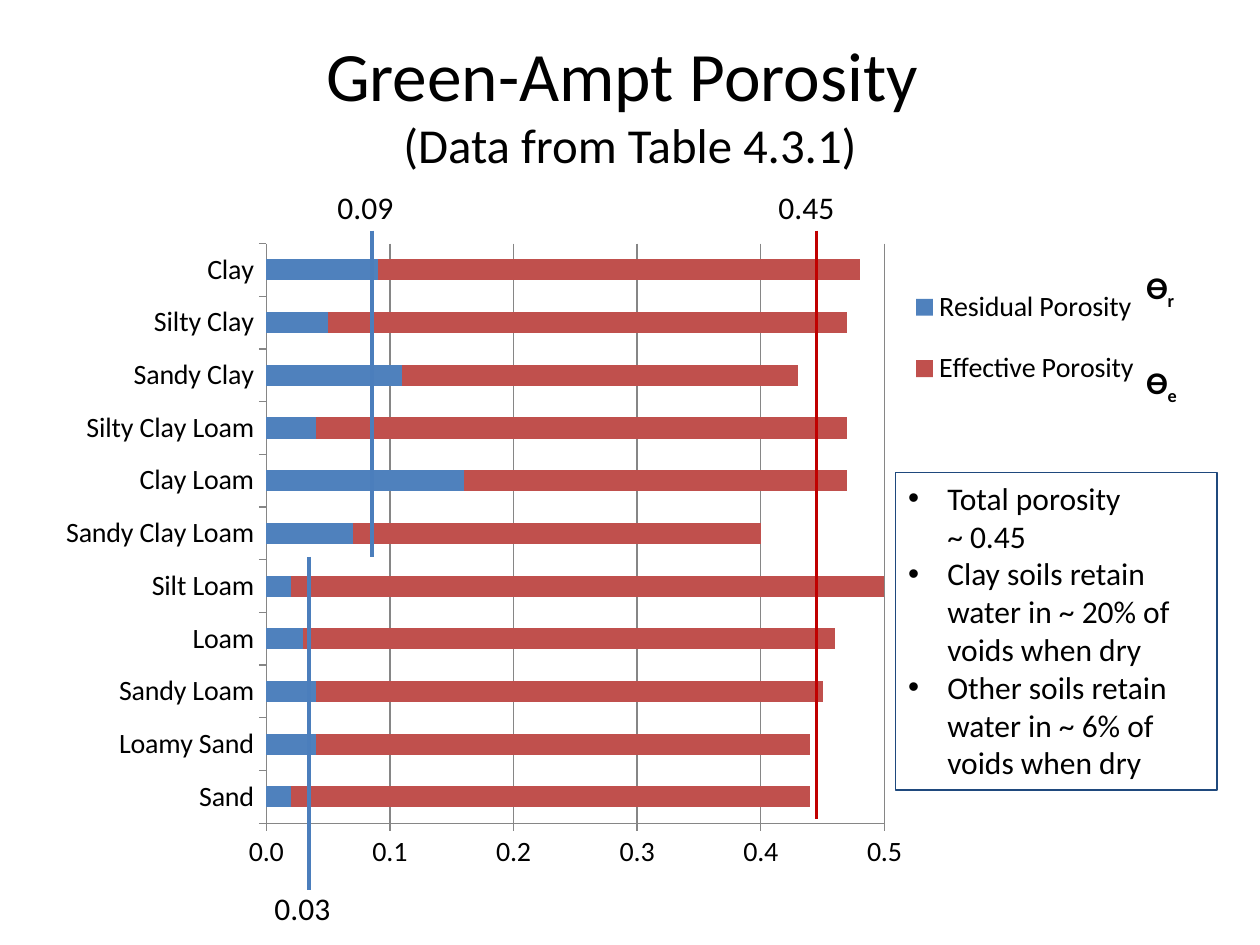
import dataclasses

import pptx
import pptx.chart.data
import pptx.dml.color
import pptx.enum.chart
import pptx.enum.shapes
import pptx.enum.text
import pptx.oxml
import pptx.oxml.ns
import pptx.util

Inches = pptx.util.Inches
Pt = pptx.util.Pt
Align = pptx.enum.text.PP_ALIGN


@dataclasses.dataclass(frozen=True)
class Theme:
    font: str = "Calibri"
    ink: str = "000000"
    blue: str = "4F81BD"
    red: str = "C0504D"
    mark: str = "4B7EBC"
    total: str = "C00000"
    edge: str = "1F497D"
    grid: str = "868686"
    title: float = 39.6
    sub: float = 27.9
    body: float = 18
    axis: float = 16


THEME = Theme()

SOILS = [
    ("Sand", 0.02, 0.42),
    ("Loamy Sand", 0.04, 0.40),
    ("Sandy Loam", 0.04, 0.41),
    ("Loam", 0.03, 0.43),
    ("Silt Loam", 0.02, 0.49),
    ("Sandy Clay Loam", 0.07, 0.33),
    ("Clay Loam", 0.16, 0.31),
    ("Silty Clay Loam", 0.04, 0.43),
    ("Sandy Clay", 0.11, 0.32),
    ("Silty Clay", 0.05, 0.42),
    ("Clay", 0.09, 0.39),
]
NOTES = [
    "Total porosity\v~ 0.45",
    "Clay soils retain water in ~ 20% of voids when dry",
    "Other soils retain water in ~ 6% of voids when dry",
]


def color(code):
    return pptx.dml.color.RGBColor.from_string(code)


def style(font, size, bold=False):
    font.name = THEME.font
    font.size = Pt(size)
    font.bold = bold
    font.color.rgb = color(THEME.ink)


def stroke(line, code, width):
    line.color.rgb = color(code)
    line.width = Pt(width)


def add_text(shapes, box, lines, size, wrap=False):
    shape = shapes.add_textbox(*map(Inches, box))
    frame = shape.text_frame
    frame.word_wrap = wrap
    frame.text = "\n".join(lines)
    for para in frame.paragraphs:
        for run in para.runs:
            style(run.font, size)
    return shape


def add_title(shapes):
    lines = ["Green-Ampt Porosity \v(Data from Table 4.3.1)"]
    shape = add_text(shapes, (0.5, 0.19, 9, 1.25), lines, THEME.title, True)
    frame = shape.text_frame
    frame.vertical_anchor = pptx.enum.text.MSO_ANCHOR.MIDDLE
    para = frame.paragraphs[0]
    para.alignment = Align.CENTER
    para.runs[1].font.size = Pt(THEME.sub)


def set_layout(part, left, top, width, height, inner=False):
    old = part.find(pptx.oxml.ns.qn("c:layout"))
    if old is not None:
        part.remove(old)
    target = '<c:layoutTarget val="inner"/>' if inner else ""
    sizes = zip("xywh", (left, top, width, height))
    values = "".join(f'<c:{key} val="{size}"/>' for key, size in sizes)
    layout = pptx.oxml.parse_xml(
        f'<c:layout {pptx.oxml.ns.nsdecls("c")}><c:manualLayout>{target}'
        f'<c:xMode val="edge"/><c:yMode val="edge"/>{values}'
        "</c:manualLayout></c:layout>"
    )
    part.insert(0 if inner else 1, layout)


def add_bars(shapes):
    names, dry, free = zip(*SOILS)
    data = pptx.chart.data.CategoryChartData()
    data.categories = names
    data.add_series("Residual Porosity", dry)
    data.add_series("Effective Porosity", free)
    kind = pptx.enum.chart.XL_CHART_TYPE.BAR_STACKED
    box = map(Inches, (0.33, 1.83, 8.92, 5.17))
    chart = shapes.add_chart(kind, *box, data).chart
    chart.has_title = False
    style(chart.font, THEME.axis)

    plot = chart.plots[0]
    plot.gap_width = 150
    plot.overlap = 100
    plot.vary_by_categories = False
    for series, code in zip(plot.series, (THEME.blue, THEME.red)):
        series.format.fill.solid()
        series.format.fill.fore_color.rgb = color(code)

    for axis in (chart.category_axis, chart.value_axis):
        axis.major_tick_mark = pptx.enum.chart.XL_TICK_MARK.OUTSIDE
        style(axis.tick_labels.font, THEME.axis)
        stroke(axis.format.line, THEME.grid, 0.75)
    scale = chart.value_axis
    scale.minimum_scale = 0
    scale.maximum_scale = 0.5
    scale.major_unit = 0.1
    scale.tick_labels.number_format = "0.0"
    scale.tick_labels.number_format_is_linked = False
    scale.has_major_gridlines = True
    stroke(scale.major_gridlines.format.line, THEME.grid, 0.75)

    chart.has_legend = True
    legend = chart.legend
    legend.position = pptx.enum.chart.XL_LEGEND_POSITION.RIGHT
    legend.include_in_layout = False
    style(legend.font, THEME.axis)
    area = chart._chartSpace.chart.plotArea
    set_layout(area, 0.2, 0.02, 0.55, 0.89, True)
    set_layout(legend._element, 0.76, 0.05, 0.23, 0.23)


def add_mark(shapes, x, top, end, code, text, left, y):
    group = shapes.add_group_shape().shapes
    kind = pptx.enum.shapes.MSO_CONNECTOR.STRAIGHT
    line = group.add_connector(kind, *map(Inches, (x, top, x, end)))
    stroke(line.line, code, 2.25)
    props = line._element.spPr
    props.append(props.makeelement(pptx.oxml.ns.qn("a:effectLst"), {}))
    add_text(group, (left, y, 0.65, 0.4), [text], THEME.body)


def add_notes(shapes):
    box = (7.11, 3.75, 2.55, 2.52)
    shape = add_text(shapes, box, NOTES, THEME.body, True)
    stroke(shape.line, THEME.edge, 0.75)
    indent = Inches(0.31)
    for para in shape.text_frame.paragraphs:
        props = para._p.get_or_add_pPr()
        props.set("marL", str(indent))
        props.set("indent", str(-indent))
        tags = (("buFont", "typeface", "Arial"), ("buChar", "char", "•"))
        for tag, key, value in tags:
            name = pptx.oxml.ns.qn(f"a:{tag}")
            props.append(props.makeelement(name, {key: value}))


def add_symbol(shapes, top, width, sub):
    shape = add_text(shapes, (9, top, width, 0.4), ["ϴ"], THEME.body)
    para = shape.text_frame.paragraphs[0]
    para.add_run().text = sub
    for run in para.runs:
        style(run.font, THEME.body, True)
    para.runs[1]._r.get_or_add_rPr().set("baseline", "-25000")


def main():
    deck = pptx.Presentation()
    deck.slide_width = Inches(10)
    deck.slide_height = Inches(7.5)
    shapes = deck.slides.add_slide(deck.slide_layouts[6]).shapes
    add_title(shapes)
    add_bars(shapes)
    add_mark(shapes, 2.95, 1.83, 4.42, THEME.mark, "0.09", 2.58, 1.44)
    add_mark(shapes, 6.48, 1.83, 6.5, THEME.total, "0.45", 6.08, 1.44)
    add_mark(shapes, 2.45, 4.42, 7.06, THEME.mark, "0.03", 2.08, 7.01)
    add_notes(shapes)
    add_symbol(shapes, 2.83, 0.46, "e")
    add_symbol(shapes, 2.08, 0.43, "r")
    deck.save("out.pptx")


if __name__ == "__main__":
    main()
